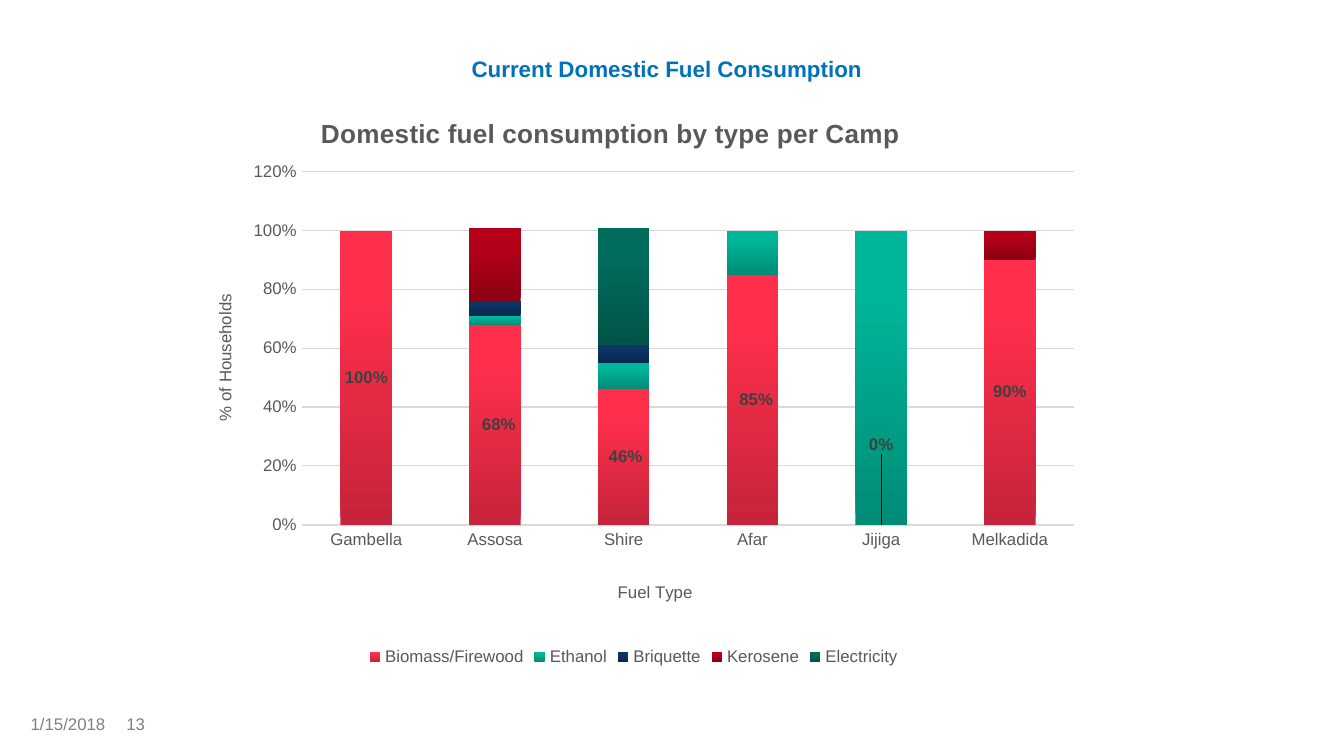
from copy import deepcopy

from lxml import etree
from pptx import Presentation
from pptx.chart.data import CategoryChartData
from pptx.dml.color import RGBColor
from pptx.enum.chart import XL_CHART_TYPE, XL_LEGEND_POSITION, XL_TICK_MARK
from pptx.enum.text import MSO_ANCHOR, PP_ALIGN
from pptx.oxml import parse_xml
from pptx.oxml.ns import nsdecls, qn
from pptx.util import Cm, Pt

STACKED = XL_CHART_TYPE.COLUMN_STACKED
LEGEND_BOTTOM = XL_LEGEND_POSITION.BOTTOM
NO_TICK = XL_TICK_MARK.NONE
TOP, BOTTOM = MSO_ANCHOR.TOP, MSO_ANCHOR.BOTTOM
LEFT, CENTER = PP_ALIGN.LEFT, PP_ALIGN.CENTER

BLUE = RGBColor(0x00, 0x72, 0xBC)
GREY = RGBColor(0x80, 0x80, 0x80)
TEXT_GREY = RGBColor(0x59, 0x59, 0x59)
LABEL_GREY = RGBColor(0x40, 0x40, 0x40)
LINE_GREY = RGBColor(0xD9, 0xD9, 0xD9)
FONT = "Arial"

CAMPS = ["Gambella", "Assosa", "Shire", "Afar", "Jijiga", "Melkadida"]


def gradient_colors(*codes):
    return [RGBColor.from_string(code) for code in codes]


FUELS = [
    ("Biomass/Firewood", [1, 0.68, 0.46, 0.85, 0, 0.9],
     gradient_colors("C5243A", "FF2F4C", "FF314D")),
    ("Ethanol", [0, 0.03, 0.09, 0.15, 1, 0],
     gradient_colors("008C76", "00B69A", "00B79A")),
    ("Briquette", [0, 0.05, 0.06, 0, 0, 0],
     gradient_colors("09284F", "0C3467", "0A3469")),
    ("Kerosene", [0, 0.25, 0, 0, 0, 0.1],
     gradient_colors("8C0013", "B50019", "B60019")),
    ("Electricity", [0, 0, 0.4, 0, 0, 0],
     gradient_colors("005447", "006D5C", "006E5D")),
]
LABEL_SHIFTS = {1: (0.004, 0), 2: (0.002, 0), 3: (0.004, 0), 4: (0, -0.14)}


def style_font(font, size, color, bold=False):
    font.name = FONT
    font.size = Pt(size)
    font.bold = bold
    font.color.rgb = color


def add_text(slide, text, box, size, color, bold=False, align=LEFT, anchor=TOP):
    frame = slide.shapes.add_textbox(*(Cm(length) for length in box)).text_frame
    frame.word_wrap = True
    frame.vertical_anchor = anchor
    frame.margin_left = frame.margin_right = 0
    frame.margin_top = frame.margin_bottom = 0
    paragraph = frame.paragraphs[0]
    paragraph.text = text
    paragraph.alignment = align
    style_font(paragraph.font, size, color, bold)
    return paragraph


def set_layout(parent, position, **settings):
    for old in parent.findall(qn("c:layout")):
        parent.remove(old)
    layout = etree.Element(qn("c:layout"))
    manual = etree.SubElement(layout, qn("c:manualLayout"))
    for tag, value in settings.items():
        etree.SubElement(manual, qn(f"c:{tag}")).set("val", str(value))
    parent.insert(position, layout)


def set_title(title, text, size, x, y, bold=False):
    paragraph = title.text_frame.paragraphs[0]
    paragraph.text = text
    style_font(paragraph.font, size, TEXT_GREY, bold)
    set_layout(title._element, 1, xMode="edge", yMode="edge", x=x, y=y)


def fill_gradient(series, colors):
    stops = "".join(
        f'<a:gs pos="{position}"><a:srgbClr val="{color}"/></a:gs>'
        for position, color in zip((0, 80000, 100000), colors))
    series.format.fill.background()
    properties = series._element.find(qn("c:spPr"))
    properties.replace(properties.find(qn("a:noFill")), parse_xml(
        f'<a:gradFill {nsdecls("a")} rotWithShape="1"><a:gsLst>{stops}</a:gsLst>'
        '<a:lin ang="16200000" scaled="0"/></a:gradFill>'))


def label_firewood(series):
    labels = series.data_labels
    labels.show_value = True
    labels.number_format = "0%"
    labels.number_format_is_linked = False
    style_font(labels.font, 9, LABEL_GREY, True)
    shared = [child for child in labels._element
              if child.tag != qn("c:showLeaderLines")]
    for position, (camp, (x, y)) in enumerate(LABEL_SHIFTS.items()):
        label = etree.Element(qn("c:dLbl"))
        etree.SubElement(label, qn("c:idx")).set("val", str(camp))
        set_layout(label, 1, x=x, y=y)
        label.extend(deepcopy(child) for child in shared)
        labels._element.insert(position, label)


def style_axes(chart):
    camps, households = chart.category_axis, chart.value_axis
    for axis in (camps, households):
        axis.major_tick_mark = axis.minor_tick_mark = NO_TICK
        style_font(axis.tick_labels.font, 9, TEXT_GREY)
    camps.format.line.color.rgb = LINE_GREY
    camps.format.line.width = Pt(1)
    set_title(camps.axis_title, "Fuel Type", 9, 0.48, 0.835)

    households.minimum_scale, households.maximum_scale = 0, 1.2
    households.major_unit = 0.2
    households.tick_labels.number_format = "0%"
    households.tick_labels.number_format_is_linked = False
    households.format.line.fill.background()
    households.major_gridlines.format.line.color.rgb = LINE_GREY
    households.major_gridlines.format.line.width = Pt(0.75)
    set_title(households.axis_title, "% of Households", 9, 0.054, 0.33)


def add_fuel_chart(slide):
    data = CategoryChartData(number_format="0%")
    data.categories = CAMPS
    for name, shares, _ in FUELS:
        data.add_series(name, shares)
    chart = slide.shapes.add_chart(
        STACKED, Cm(3.02), Cm(1.96), Cm(17.91), Cm(10.74), data).chart
    chart.font.name = FONT
    chart.font.size = Pt(10)
    chart.has_title = True
    set_title(chart.chart_title, "Domestic fuel consumption by type per Camp",
              14, 0.165, 0.015, True)
    chart.has_legend = True
    chart.legend.position = LEGEND_BOTTOM
    chart.legend.include_in_layout = False
    style_font(chart.legend.font, 9, TEXT_GREY)
    style_axes(chart)

    plot = chart.plots[0]
    plot.gap_width, plot.overlap = 150, 100
    plot.vary_by_categories = False
    for series, (_, _, colors) in zip(plot.series, FUELS):
        fill_gradient(series, colors)
    label_firewood(plot.series[0])
    plot_area = chart._chartSpace.find(f".//{qn('c:plotArea')}")
    set_layout(plot_area, 0, layoutTarget="inner", xMode="edge", yMode="edge",
               x=0.15, y=0.12, w=0.815, h=0.621)


def main():
    presentation = Presentation()
    presentation.slide_width = Cm(25.4)
    presentation.slide_height = Cm(14.29)
    slide = presentation.slides.add_slide(presentation.slide_layouts[6])
    heading = add_text(slide, "Current Domestic Fuel Consumption",
                       (0.45, 0, 24.31, 1.55), 12, BLUE, True, CENTER, BOTTOM)
    heading.line_spacing = 0.9
    add_text(slide, "1/15/2018", (0.58, 13.49, 1.8, 0.43), 9, GREY)
    add_text(slide, "13", (2.39, 13.49, 1.27, 0.43), 9, GREY)
    add_fuel_chart(slide)
    presentation.save("out.pptx")


if __name__ == "__main__":
    main()
